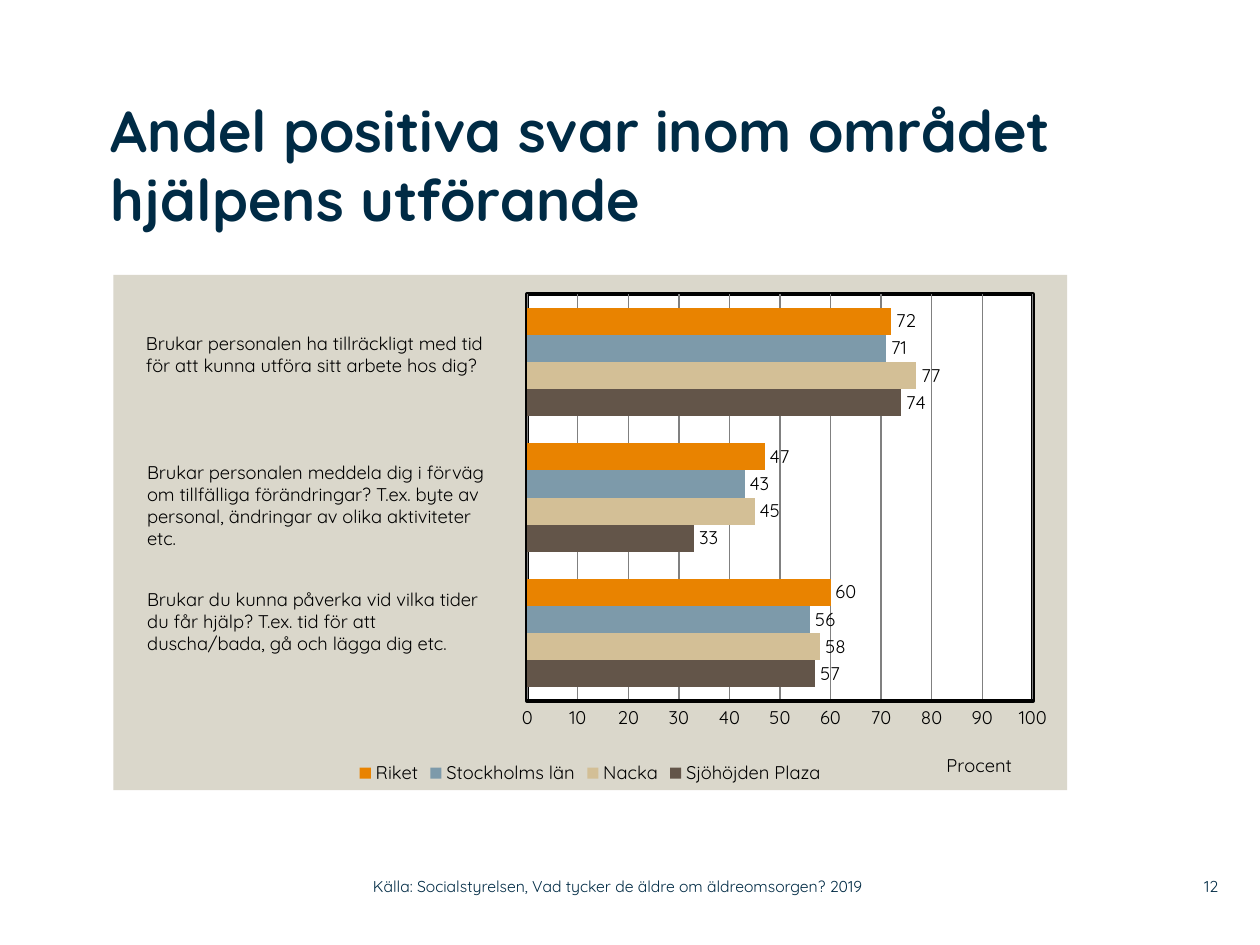
from pptx import Presentation
from pptx.chart.data import CategoryChartData as ChartData
from pptx.dml.color import RGBColor as Color
from pptx.enum.chart import XL_CHART_TYPE as ChartType
from pptx.enum.chart import XL_LABEL_POSITION as LabelPosition
from pptx.enum.chart import XL_LEGEND_POSITION as LegendPosition
from pptx.enum.chart import XL_TICK_MARK as TickMark
from pptx.enum.text import MSO_ANCHOR as Anchor
from pptx.enum.text import PP_ALIGN as Align
from pptx.oxml import parse_xml
from pptx.oxml.ns import nsdecls, qn
from pptx.util import Pt

COLORS = {
    "navy": "002B45", "black": "000000", "white": "FFFFFF", "panel": "DAD7CB",
    "grid": "808080", "brown": "635549", "sand": "D3BF96", "blue": "7D9AAA",
    "orange": "E98300",
}
SERIES = [
    ("Sjöhöjden Plaza", (57, 33, 74), "brown"),
    ("Nacka", (58, 45, 77), "sand"),
    ("Stockholms län", (56, 43, 71), "blue"),
    ("Riket", (60, 47, 72), "orange"),
]
QUESTIONS = [
    (76.3, 186.5, 215.3, 32.4, [
        "Brukar personalen ha tillräckligt med tid",
        "för att kunna utföra sitt arbete hos dig?"]),
    (77, 260, 213.8, 58.3, [
        "Brukar personalen meddela dig i förväg om tillfälliga förändringar? "
        "T.ex. byte av personal, ändringar av olika aktiviteter etc."]),
    (77, 332.7, 213.8, 45.4, [
        "Brukar du kunna påverka vid vilka tider",
        "du får hjälp? T.ex. tid för att",
        "duscha/bada, gå och lägga dig etc."]),
]


class SlideBuilder:
    font_name = "Quicksand"
    body_size = 10.5

    def __init__(self, slide):
        self.slide = slide

    def style_font(self, font, size, color, bold=False):
        font.name = self.font_name
        font.size = Pt(size)
        font.bold = bold
        font.color.rgb = Color.from_string(COLORS[color])

    def fill_text(self, shape, lines, size, color, bold=False, align=Align.LEFT,
                  anchor=Anchor.TOP, inset=True):
        frame = shape.text_frame
        frame.word_wrap = True
        frame.vertical_anchor = anchor
        if not inset:
            frame.margin_left = frame.margin_right = 0
            frame.margin_top = frame.margin_bottom = 0
        frame.text = "\n".join(lines)
        for paragraph in frame.paragraphs:
            paragraph.alignment = align
            paragraph.line_spacing = 1
            paragraph.space_before = Pt(0)
            self.style_font(paragraph.font, size, color, bold)

    def title(self, left, top, width, height, text):
        shape = self.slide.shapes.title
        shape.left, shape.top = Pt(left), Pt(top)
        shape.width, shape.height = Pt(width), Pt(height)
        self.fill_text(shape, [text], 33, "navy", bold=True, inset=False)

    def question(self, left, top, width, height, lines):
        shape = self.slide.shapes.add_textbox(Pt(left), Pt(top), Pt(width), Pt(height))
        self.fill_text(shape, lines, self.body_size, "black")

    def footer(self, left, top, width, height, text, align=Align.LEFT):
        shape = self.slide.shapes.add_textbox(Pt(left), Pt(top), Pt(width), Pt(height))
        self.fill_text(shape, [text], 9, "navy", align=align, anchor=Anchor.MIDDLE, inset=False)

    def place(self, element, index, x, y, size=None):
        old_layout = element.find(qn("c:layout"))
        if old_layout is not None:
            element.remove(old_layout)
        target = '<c:layoutTarget val="inner"/>' if size else ""
        extent = '<c:w val="{}"/><c:h val="{}"/>'.format(*size) if size else ""
        element.insert(index, parse_xml(
            f'<c:layout {nsdecls("c")}><c:manualLayout>{target}'
            f'<c:xMode val="edge"/><c:yMode val="edge"/>'
            f'<c:x val="{x}"/><c:y val="{y}"/>{extent}'
            f'</c:manualLayout></c:layout>'))

    def area_format(self, fill, line=None, width=0):
        outline = "<a:noFill/>"
        if line:
            outline = f'<a:solidFill><a:srgbClr val="{COLORS[line]}"/></a:solidFill>'
        return parse_xml(
            f'<c:spPr {nsdecls("c", "a")}><a:solidFill><a:srgbClr val="{COLORS[fill]}"/>'
            f'</a:solidFill><a:ln w="{Pt(width)}">{outline}</a:ln></c:spPr>')

    def bar_chart(self, left, top, width, height, categories, series_rows):
        data = ChartData()
        data.categories = categories
        for name, values, _ in series_rows:
            data.add_series(name, values)
        chart = self.slide.shapes.add_chart(
            ChartType.BAR_CLUSTERED, Pt(left), Pt(top), Pt(width), Pt(height), data).chart
        self.style_font(chart.font, self.body_size, "black")
        chart.has_title = False
        chart.has_legend = True
        chart.legend.position = LegendPosition.BOTTOM
        chart.legend.include_in_layout = False

        plot = chart.plots[0]
        plot.gap_width = 100
        plot.overlap = 0
        plot.vary_by_categories = False
        plot.has_data_labels = True
        plot.data_labels.show_value = True
        plot.data_labels.position = LabelPosition.OUTSIDE_END
        self.style_font(plot.data_labels.font, self.body_size, "black")
        for series, (_, _, color) in zip(plot.series, series_rows):
            series.format.fill.solid()
            series.format.fill.fore_color.rgb = Color.from_string(COLORS[color])
        self.value_axis(chart.value_axis)
        chart.category_axis.visible = False

        chart_element = chart.element.find(qn("c:chart"))
        plot_area = chart_element.find(qn("c:plotArea"))
        self.place(plot_area, 0, 0.434, 0.038, (0.53, 0.789))
        plot_area.append(self.area_format("white", "black", 2.5))
        chart_element.addnext(self.area_format("panel"))

    def value_axis(self, axis):
        axis.minimum_scale = 0
        axis.maximum_scale = 100
        axis.major_unit = 10
        axis.major_tick_mark = axis.minor_tick_mark = TickMark.NONE
        axis.has_major_gridlines = True
        for line, color, width in (
                (axis.major_gridlines.format.line, "grid", 0.75),
                (axis.format.line, "black", 2)):
            line.color.rgb = Color.from_string(COLORS[color])
            line.width = Pt(width)
        axis.has_title = True
        frame = axis.axis_title.text_frame
        frame.text = "Procent"
        self.style_font(frame.paragraphs[0].font, self.body_size, "black")
        self.place(frame._txBody.getparent().getparent(), 1, 0.87, 0.92)


def main():
    presentation = Presentation()
    presentation.slide_width = Pt(720)
    presentation.slide_height = Pt(540)
    builder = SlideBuilder(presentation.slides.add_slide(presentation.slide_layouts[5]))
    builder.bar_chart(64.8, 157, 545, 294.5, ["1", "2", "3"], SERIES)
    builder.title(63.4, 54, 547.2, 102.2, "Andel positiva svar inom området hjälpens utförande")
    for question in QUESTIONS:
        builder.question(*question)
    builder.footer(662.4, 496, 33.8, 21, "12", Align.RIGHT)
    builder.footer(213.1, 496, 319, 21,
                   "Källa: Socialstyrelsen, Vad tycker de äldre om äldreomsorgen? 2019")
    presentation.save("out.pptx")


if __name__ == "__main__":
    main()
